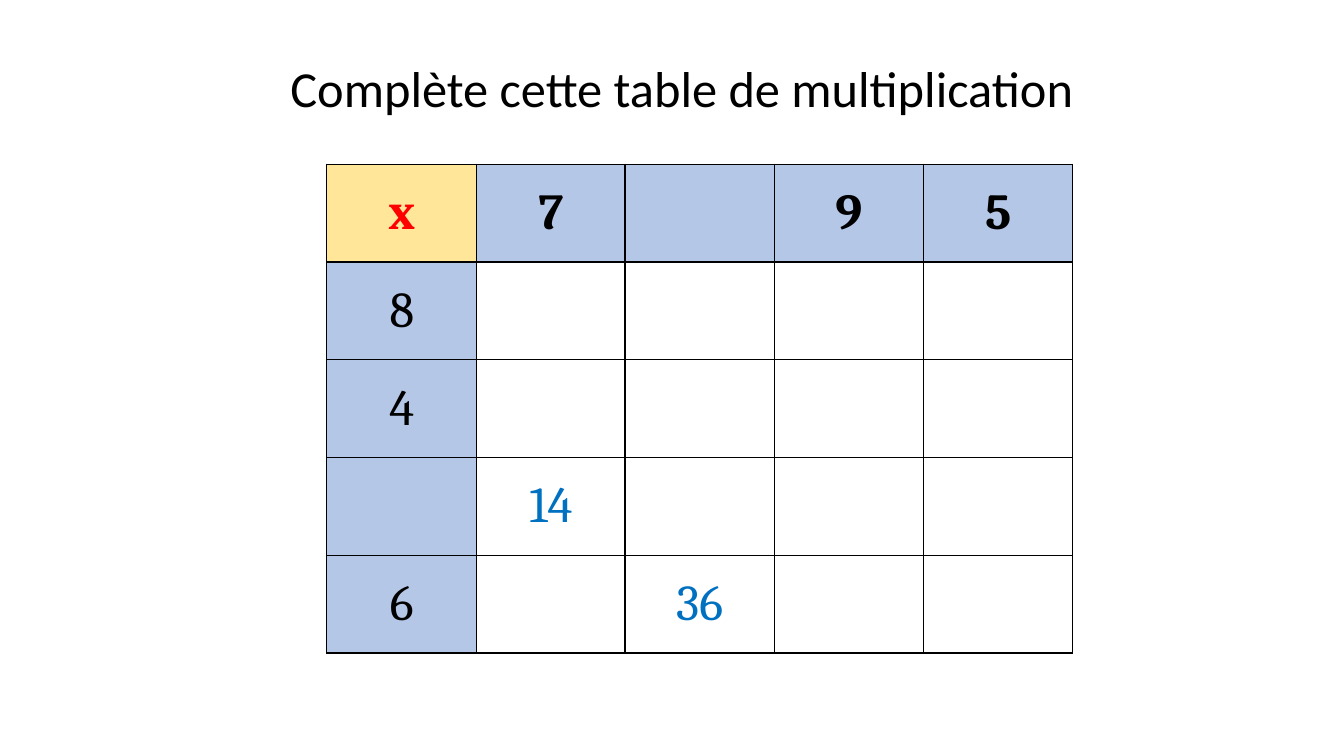
from lxml import etree
from pptx import Presentation
from pptx.dml.color import RGBColor
from pptx.enum.text import MSO_ANCHOR, PP_ALIGN
from pptx.oxml.ns import qn
from pptx.util import Inches, Pt

LEFT, CENTER = PP_ALIGN.LEFT, PP_ALIGN.CENTER
TOP, MIDDLE = MSO_ANCHOR.TOP, MSO_ANCHOR.MIDDLE
TITLE_ONLY = 5

BLACK, WHITE, RED, BLUE = "000000", "FFFFFF", "FF0000", "0070C0"
CORNER_FILL, HEADER_FILL = "FFE699", "B4C7E7"
COLUMN_WIDTHS = [1.49, 1.47, 1.48, 1.48, 1.48]
ROW_HEIGHT = 0.97
GRID = [
    ["x", "7", "", "9", "5"],
    ["8", "", "", "", ""],
    ["4", "", "", "", ""],
    ["", "14", "", "", ""],
    ["6", "", "36", "", ""],
]


def color(value):
    return RGBColor.from_string(value)


def write(text_frame, text, font="Calibri", size=36, fill=BLACK, bold=False, align=LEFT):
    paragraph = text_frame.paragraphs[0]
    paragraph.alignment = align
    run = paragraph.add_run()
    run.text = text
    run.font.name = font
    run.font.size = Pt(size)
    run.font.bold = bold
    run.font.color.rgb = color(fill)


class ExerciseSlide:
    """Holds the current slide and draws its styled elements."""

    def __init__(self, presentation):
        self.slide = presentation.slides.add_slide(presentation.slide_layouts[TITLE_ONLY])
        self.slide.background.fill.solid()
        self.slide.background.fill.fore_color.rgb = color(WHITE)

    def title(self, text, left, top, width, height):
        shape = self.slide.shapes.title
        shape.left, shape.top = Inches(left), Inches(top)
        shape.width, shape.height = Inches(width), Inches(height)
        shape.text_frame.word_wrap = True
        shape.text_frame.vertical_anchor = TOP
        write(shape.text_frame, text)

    def border(self, cell):
        properties = cell._tc.get_or_add_tcPr()
        for side in ("lnL", "lnR", "lnT", "lnB"):
            line = etree.SubElement(properties, qn(f"a:{side}"), w=str(Pt(1)))
            fill = etree.SubElement(line, qn("a:solidFill"))
            etree.SubElement(fill, qn("a:srgbClr"), val=BLACK)

    def cell(self, cell, text, row, column):
        is_corner = row == column == 0
        is_header = row == 0 or column == 0
        cell.vertical_anchor = MIDDLE
        self.border(cell)
        if is_header:
            cell.fill.solid()
            cell.fill.fore_color.rgb = color(CORNER_FILL if is_corner else HEADER_FILL)
        else:
            cell.fill.background()
        if text:
            text_color = RED if is_corner else BLACK if is_header else BLUE
            write(cell.text_frame, text, font="Cambria", fill=text_color,
                  bold=row == 0, align=CENTER)

    def table(self, grid, left, top):
        frame = self.slide.shapes.add_table(
            len(grid), len(COLUMN_WIDTHS), Inches(left), Inches(top),
            Inches(sum(COLUMN_WIDTHS)), Inches(ROW_HEIGHT * len(grid)))
        table = frame.table
        for column, width in zip(table.columns, COLUMN_WIDTHS):
            column.width = Inches(width)
        for row_index, texts in enumerate(grid):
            table.rows[row_index].height = Inches(ROW_HEIGHT)
            for column_index, text in enumerate(texts):
                self.cell(table.cell(row_index, column_index), text, row_index, column_index)


def main():
    presentation = Presentation()
    presentation.slide_width = Inches(13.33)
    presentation.slide_height = Inches(7.5)
    exercise = ExerciseSlide(presentation)
    exercise.title("Complète cette table de multiplication", 2.78, 0.52, 9.32, 0.71)
    exercise.table(GRID, 3.24, 1.63)
    presentation.save("out.pptx")


if __name__ == "__main__":
    main()
